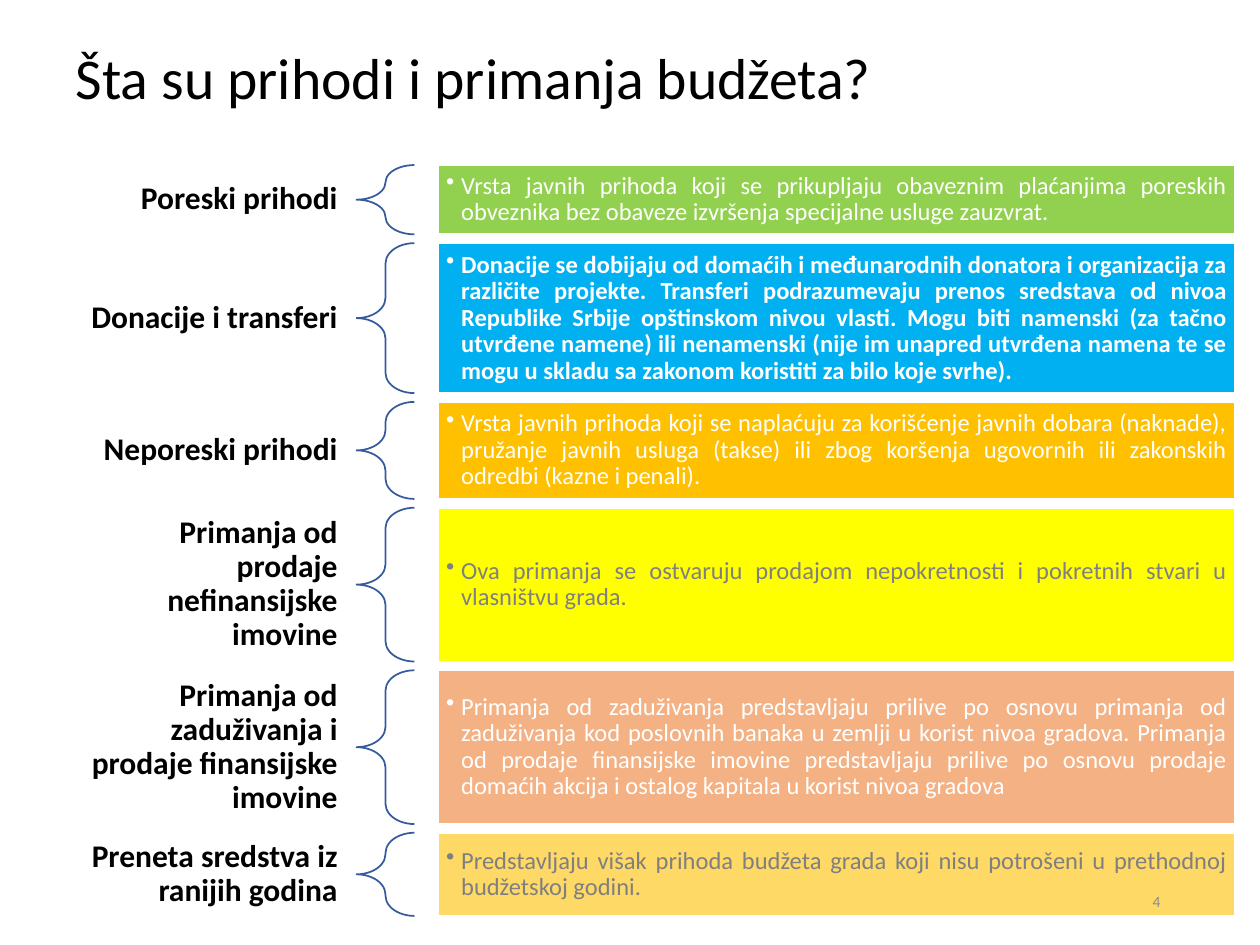
from lxml.etree import SubElement
from pptx import Presentation
from pptx.dml.color import RGBColor
from pptx.enum.shapes import MSO_SHAPE as Shape
from pptx.enum.text import MSO_ANCHOR as Anchor, PP_ALIGN as Align
from pptx.oxml.ns import qn
from pptx.util import Inches, Pt

TOP, GAP = 1.31, 0.07
LABEL_LEFT, LABEL_WIDTH = 0.5, 2.32
BRACE_LEFT, BRACE_WIDTH = 2.83, 0.46
PANEL_LEFT, PANEL_WIDTH = 3.48, 6.32

REVENUES = [
    ("Poreski prihodi", 0.55, "92D050", "FFFFFF", False,
     "Vrsta javnih prihoda koji se prikupljaju obaveznim plaćanjima poreskih "
     "obveznika bez obaveze izvršenja specijalne usluge zauzvrat."),
    ("Donacije i transferi", 1.19, "00B0F0", "FFFFFF", True,
     "Donacije se dobijaju od domaćih i međunarodnih donatora i organizacija za "
     "različite projekte. Transferi podrazumevaju prenos sredstava od nivoa "
     "Republike Srbije opštinskom nivou vlasti. Mogu biti namenski (za tačno "
     "utvrđene namene) ili nenamenski (nije im unapred utvrđena namena te se "
     "mogu u skladu sa zakonom koristiti za bilo koje svrhe)."),
    ("Neporeski prihodi", 0.77, "FFC000", "FFFFFF", False,
     "Vrsta javnih prihoda koji se naplaćuju za korišćenje javnih dobara "
     "(naknade), pružanje javnih usluga (takse) ili zbog koršenja ugovornih ili "
     "zakonskih odredbi (kazne i penali)."),
    ("Primanja od prodaje nefinansijske imovine", 1.22, "FFFF00", "808080", False,
     "Ova primanja se ostvaruju prodajom nepokretnosti i pokretnih stvari u "
     "vlasništvu grada."),
    ("Primanja od zaduživanja i prodaje finansijske imovine", 1.22, "F4B183",
     "FFFFFF", False,
     "Primanja od zaduživanja predstavljaju prilive po osnovu primanja od "
     "zaduživanja kod poslovnih banaka u zemlji u korist nivoa gradova. Primanja "
     "od prodaje finansijske imovine predstavljaju prilive po osnovu prodaje "
     "domaćih akcija i ostalog kapitala u korist nivoa gradova"),
    ("Preneta sredstva iz ranijih godina", 0.66, "FFD966", "7F7F7F", False,
     "Predstavljaju višak prihoda budžeta grada koji nisu potrošeni u prethodnoj "
     "budžetskoj godini."),
]


def color(hex_value):
    """Turn a hex string into a colour."""
    return RGBColor.from_string(hex_value)


def set_all(target, values):
    """Set every attribute named in values."""
    for name, value in values.items():
        setattr(target, name, value)


def write(shape, text, size, hex_value, align, bold=False, spacing=0.9, inset=(0.1, 0.05)):
    """Fill a shape with one formatted paragraph and return it."""
    side, edge = map(Inches, inset)
    frame = shape.text_frame
    set_all(frame, {"word_wrap": True, "vertical_anchor": Anchor.MIDDLE,
                    "margin_left": side, "margin_right": side,
                    "margin_top": edge, "margin_bottom": edge})
    paragraph = frame.paragraphs[0]
    set_all(paragraph, {"alignment": align, "line_spacing": spacing})
    run = paragraph.add_run()
    run.text = text
    set_all(run.font, {"name": "Calibri", "size": Pt(size), "bold": bold})
    run.font.color.rgb = color(hex_value)
    return paragraph


def add_bullet(paragraph):
    """Give a paragraph a hanging bullet."""
    paragraph.level = 1
    properties = paragraph._p.get_or_add_pPr()
    properties.set("marL", str(Inches(0.12)))
    properties.set("indent", str(-Inches(0.12)))
    SubElement(properties, qn("a:buChar")).set("char", "•")


def outlined(slide, kind, box, line):
    """Add a preset shape with a thin outline and no shadow."""
    shape = slide.shapes.add_shape(kind, *map(Inches, box))
    shape.shadow.inherit = False
    shape.line.color.rgb = color(line)
    shape.line.width = Pt(1)
    return shape


def add_title(slide, box, text):
    """Place and format the slide title."""
    title = slide.shapes.title
    set_all(title, dict(zip(("left", "top", "width", "height"), map(Inches, box))))
    write(title, text, 33, "000000", Align.LEFT)


def add_revenue(slide, top, revenue):
    """Add one row: label, brace and description panel."""
    name, height, fill, ink, bold, description = revenue
    label = slide.shapes.add_textbox(
        *map(Inches, (LABEL_LEFT, top, LABEL_WIDTH, height)))
    write(label, name, 18, "000000", Align.RIGHT, True, inset=(0.14, 0.05))

    brace = outlined(slide, Shape.LEFT_BRACE,
                     (BRACE_LEFT, top, BRACE_WIDTH, height), "365B9D")
    brace.fill.background()
    brace.adjustments[0] = 0.35

    panel = outlined(slide, Shape.RECTANGLE,
                     (PANEL_LEFT, top, PANEL_WIDTH, height), "FFFFFF")
    panel.fill.solid()
    panel.fill.fore_color.rgb = color(fill)
    add_bullet(write(panel, description, 14, ink, Align.JUSTIFY, bold, inset=(0.06, 0.06)))


def add_page_number(slide, box, number):
    """Add the page number."""
    page = slide.shapes.add_textbox(*map(Inches, box))
    write(page, number, 9, "8C8C8C", Align.RIGHT, spacing=1.0)


def main():
    """Build and save the slide."""
    deck = Presentation()
    set_all(deck, {"slide_width": Inches(10), "slide_height": Inches(7.5)})
    slide = deck.slides.add_slide(deck.slide_layouts[5])
    add_title(slide, (0.5, 0.3, 9, 0.68), "Šta su prihodi i primanja budžeta?")
    top = TOP
    for revenue in REVENUES:
        add_revenue(slide, top, revenue)
        top += revenue[1] + GAP
    add_page_number(slide, (7.06, 6.95, 2.25, 0.4), "4")
    deck.save("out.pptx")


if __name__ == "__main__":
    main()
